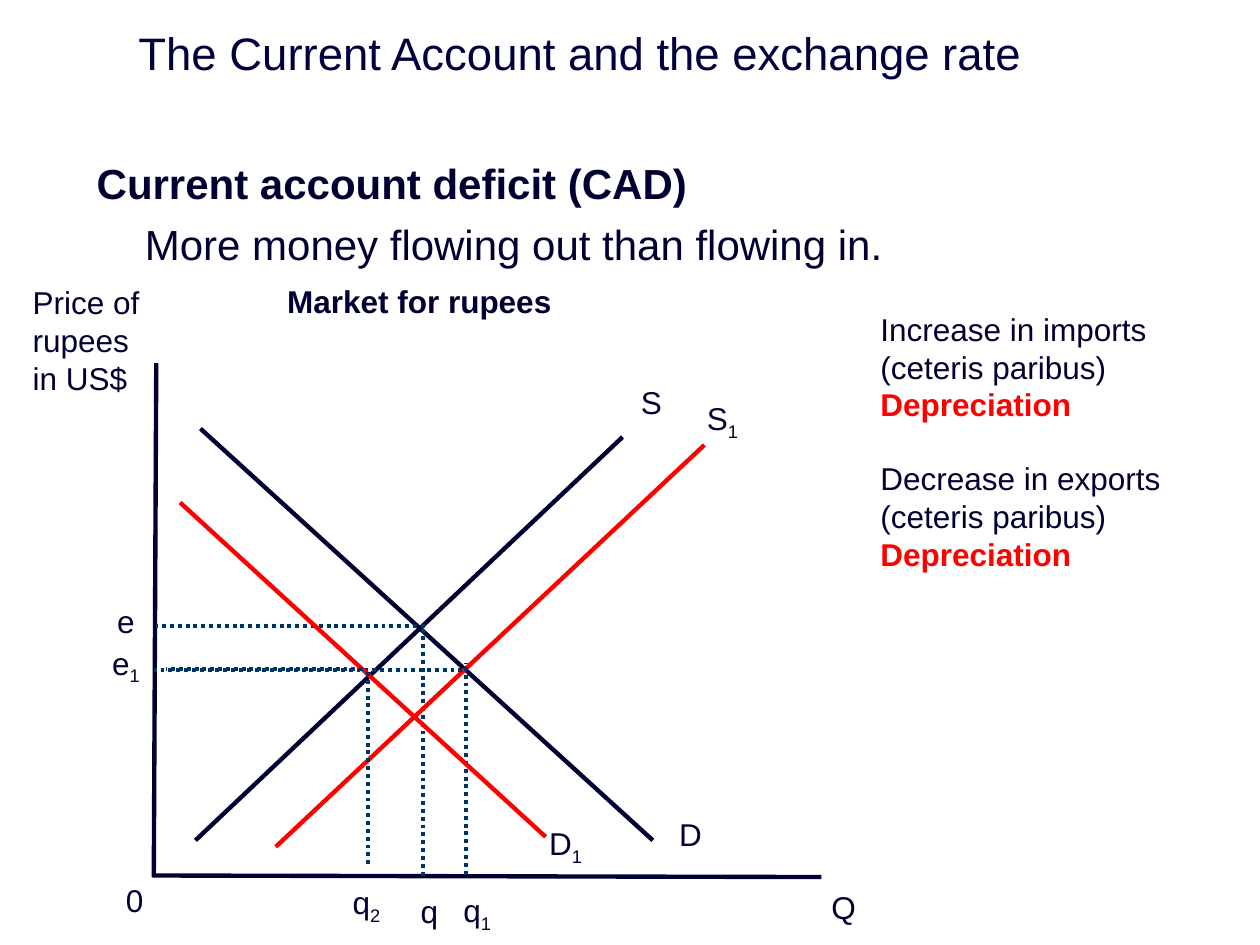
from pptx import Presentation
from pptx.dml.color import RGBColor
from pptx.enum.dml import MSO_LINE
from pptx.enum.shapes import MSO_CONNECTOR
from pptx.enum.text import MSO_ANCHOR
from pptx.util import Cm, Pt
from lxml import etree

STRAIGHT = MSO_CONNECTOR.STRAIGHT
DOTTED = MSO_LINE.ROUND_DOT
MIDDLE = MSO_ANCHOR.MIDDLE
A = "{http://schemas.openxmlformats.org/drawingml/2006/main}"
COLORS = {"title": "00003E", "ink": "000032", "red": "FF0000", "guide": "003366"}

prs = Presentation()
prs.slide_width, prs.slide_height = Cm(25.4), Cm(19.05)
s = prs.slides.add_slide(prs.slide_layouts[6])


def style(p, size=18, color="ink", bold=False):
    p.font.name = "Arial"
    p.font.size = Pt(size)
    p.font.bold = bold
    p.font.color.rgb = RGBColor.from_string(COLORS[color])


def add_text(x, y, w, h, text, **kw):
    """Add a wrapping text box with one styled paragraph and return its frame."""
    tf = s.shapes.add_textbox(Cm(x), Cm(y), Cm(w), Cm(h)).text_frame
    tf.word_wrap = True
    tf.paragraphs[0].text = text
    style(tf.paragraphs[0], **kw)
    return tf


# Heading and body
tf = add_text(2.54, 0.41, 22.86, 1.3, "The Current Account and the exchange rate",
              size=26, color="title")
tf.vertical_anchor = MIDDLE

tf = add_text(1.7, 3.05, 22.43, 3, "Current account deficit (CAD)", size=24, bold=True)
p = tf.add_paragraph()
p.text = "More money flowing out than flowing in."
p._p.get_or_add_pPr().set("marL", str(Cm(0.97)))
p.space_before = Pt(6)
style(p, size=24)

add_text(0.41, 5.59, 2.72, 2.57, "Price of rupees in US$")
add_text(5.54, 5.56, 9.93, 1.02, "Market for rupees", bold=True)

# Axes, curves and guides, back to front: x1, y1, x2, y2, colour
LINES = [
    (3.15, 7.32, 3.1, 17.68, "ink"),       # price axis
    (16.56, 17.68, 3.07, 17.65, "ink"),    # quantity axis
    (12.55, 8.81, 3.94, 16.94, "ink"),     # S
    (4.04, 8.64, 13.16, 16.94, "ink"),     # D
    (8.53, 17.65, 8.53, 12.62, "guide"),   # q
    (14.2, 8.97, 5.56, 17.07, "red"),      # S1
    (9.32, 13.51, 3.1, 13.51, "guide"),    # e1 to S1
    (9.4, 17.63, 9.4, 13.36, "guide"),     # q1
    (8.56, 12.62, 3.15, 12.62, "guide"),   # e
    (3.63, 10.13, 11, 16.87, "red"),       # D1
    (7.32, 13.49, 3.35, 13.49, "guide"),   # e1 to D1
    (7.42, 17.42, 7.42, 13.49, "guide"),   # q2
]
for x1, y1, x2, y2, color in LINES:
    line = s.shapes.add_connector(STRAIGHT, Cm(x1), Cm(y1), Cm(x2), Cm(y2))
    line.line.color.rgb = RGBColor.from_string(COLORS[color])
    line.line.width = Pt(2.5)
    if color == "guide":
        line.line.width = Pt(2.25)
        line.line.dash_style = DOTTED
    etree.SubElement(line._element.spPr, A + "effectLst")

# Labels: x, y, width, letter, subscript
LABELS = [
    (16.51, 17.78, 1.63, "Q", ""),
    (2.29, 17.63, 1.63, "0", ""),
    (12.67, 7.59, 1.55, "S", ""),
    (14, 7.92, 1.55, "S", "1"),
    (13.44, 16.31, 1.55, "D", ""),
    (10.82, 16.48, 1.55, "D", "1"),
    (2.11, 12.01, 1.91, "e", ""),
    (2.01, 12.85, 1.91, "e", "1"),
    (8.23, 17.86, 1.12, "q", ""),
    (9.09, 17.83, 1.12, "q", "1"),
    (6.86, 17.68, 1.12, "q", "2"),
]
for x, y, w, letter, sub in LABELS:
    tf = add_text(x, y, w, 1.02, letter)
    if sub:
        r = tf.paragraphs[0].add_run()
        r.text = sub
        r._r.get_or_add_rPr().set("baseline", "-25000")

# Causes and their effect
tf = add_text(17.5, 6.12, 6.81, 5.64, "Increase in imports")
for text in ("(ceteris paribus)", "Depreciation", "Decrease in exports",
             "(ceteris paribus)", "Depreciation"):
    p = tf.add_paragraph()
    p.text = text
    effect = text == "Depreciation"
    style(p, color="red" if effect else "ink", bold=effect)
    if text == "Decrease in exports":
        p.space_before = Pt(20.7)

prs.save("out.pptx")
